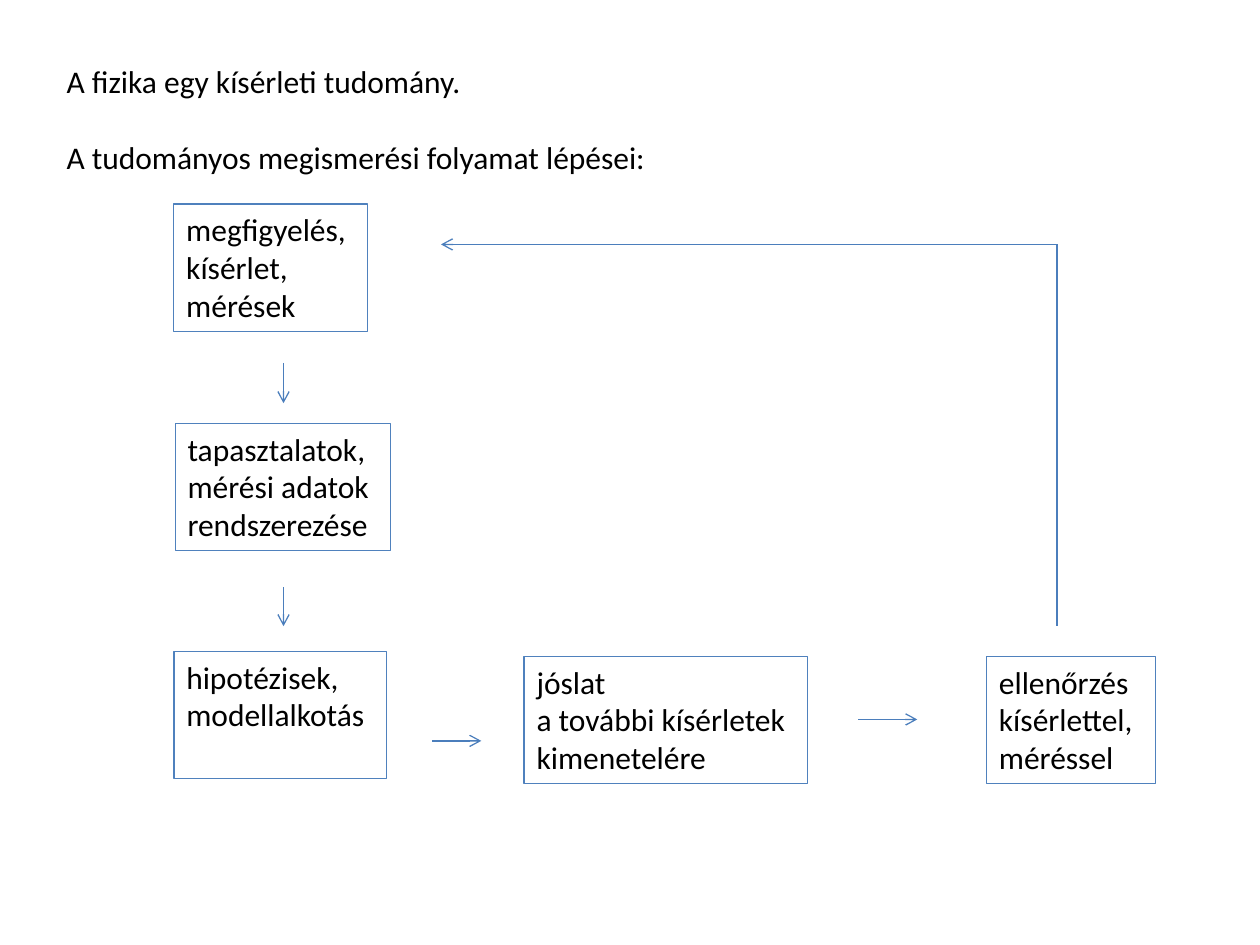
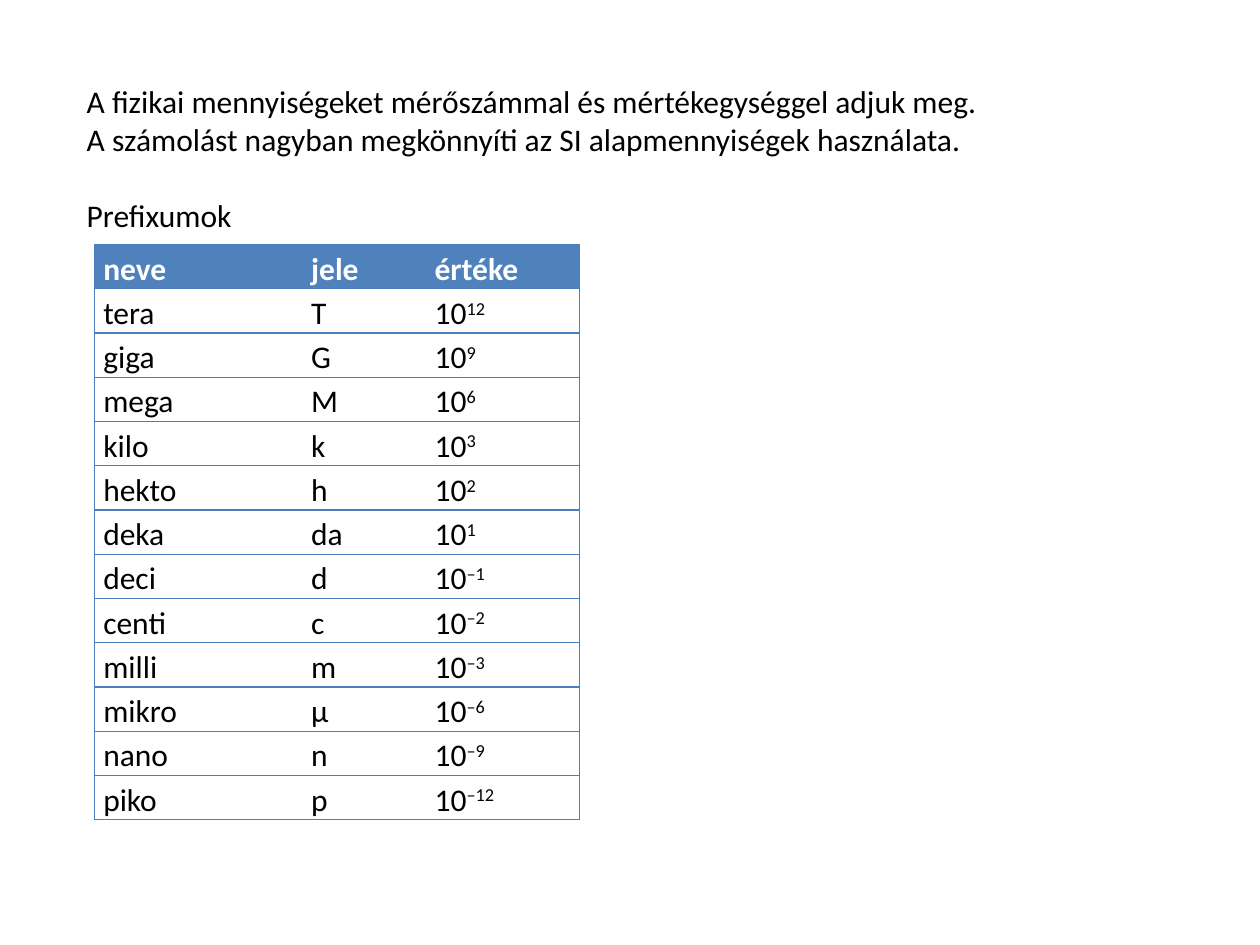
"""Build two physics slides: the steps of scientific inquiry and the SI prefixes."""

from dataclasses import dataclass

import lxml.etree
import pptx
import pptx.dml.color
import pptx.enum.shapes
import pptx.enum.text
import pptx.oxml.ns
import pptx.shapes.autoshape
import pptx.slide
import pptx.table
import pptx.text.text
import pptx.util
from pptx.util import Inches

COLORS = {
    "text": "000000",
    "header_text": "FFFFFF",
    "header": "4F81BD",
    "box_line": "4F81BD",
    "rule": "4B7EBC",
}
FONT = "Calibri"
FONT_SIZE = pptx.util.Pt(18)
LINE_WIDTH = pptx.util.Pt(0.75)
PARAGRAPH_GAP = pptx.util.Pt(22)
STEP_HEIGHT = 1.01
COLUMN_ARROW_X = 2.25
RETURN_X, RETURN_Y = 8.39, 1.94
RETURN_BOTTOM = 4.97


@dataclass(frozen=True)
class Step:
    """A boxed step of the process."""

    left: float
    top: float
    width: float
    lines: tuple[str, ...]


@dataclass(frozen=True)
class Link:
    """A straight line, with or without an arrowhead at its end."""

    begin: tuple[float, float]
    end: tuple[float, float]
    arrow: bool = True


@dataclass(frozen=True)
class Prefix:
    """An SI prefix with its power of ten."""

    name: str
    symbol: str
    exponent: str


STEPS = (
    Step(1.38, 1.62, 1.54, ("megfigyelés,", "kísérlet,", "mérések")),
    Step(1.39, 3.36, 1.71, ("tapasztalatok,", "mérési adatok", "rendszerezése")),
    Step(1.38, 5.17, 1.69, ("hipotézisek,", "modellalkotás")),
    Step(4.16, 5.21, 2.25, ("jóslat", "a további kísérletek", "kimenetelére")),
    Step(7.83, 5.21, 1.34, ("ellenőrzés", "kísérlettel,", "méréssel")),
)
LINKS = (
    Link((6.81, 5.71), (7.28, 5.71)),
    Link((3.43, 5.88), (3.82, 5.88)),
    Link((RETURN_X, RETURN_Y), (3.5, RETURN_Y)),
    Link((RETURN_X, RETURN_Y), (RETURN_X, RETURN_BOTTOM), arrow=False),
    Link((COLUMN_ARROW_X, 2.88), (COLUMN_ARROW_X, 3.2)),
    Link((COLUMN_ARROW_X, 4.66), (COLUMN_ARROW_X, 4.97)),
)
HEADINGS = ("neve", "jele", "értéke")
COLUMN_WIDTHS = (1.65, 0.98, 1.22)
TABLE_HEIGHT = 4.49
PREFIXES = (
    Prefix("tera", "T", "12"),
    Prefix("giga", "G", "9"),
    Prefix("mega", "M", "6"),
    Prefix("kilo", "k", "3"),
    Prefix("hekto", "h", "2"),
    Prefix("deka", "da", "1"),
    Prefix("deci", "d", "–1"),
    Prefix("centi", "c", "–2"),
    Prefix("milli", "m", "–3"),
    Prefix("mikro", "μ", "–6"),
    Prefix("nano", "n", "–9"),
    Prefix("piko", "p", "–12"),
)


def rgb(name: str) -> pptx.dml.color.RGBColor:
    """Return the named colour."""
    return pptx.dml.color.RGBColor.from_string(COLORS[name])


def add_run(
    paragraph: pptx.text.text._Paragraph,
    text: str,
    color: str = "text",
    bold: bool = False,
    superscript: bool = False,
) -> None:
    """Add one formatted run."""
    run = paragraph.add_run()
    run.text = text
    run.font.name = FONT
    run.font.size = FONT_SIZE
    run.font.bold = bold
    run.font.color.rgb = rgb(color)
    if superscript:
        run._r.get_or_add_rPr().set("baseline", "30000")


def add_text(
    slide: pptx.slide.Slide,
    left: float,
    top: float,
    width: float,
    height: float,
    lines: tuple[str, ...],
    wrap: bool = True,
) -> pptx.shapes.autoshape.Shape:
    """Add a text box with one paragraph per line."""
    shape = slide.shapes.add_textbox(Inches(left), Inches(top), Inches(width), Inches(height))
    frame = shape.text_frame
    frame.word_wrap = wrap
    frame.auto_size = pptx.enum.text.MSO_AUTO_SIZE.NONE
    for index, line in enumerate(lines):
        paragraph = frame.add_paragraph() if index else frame.paragraphs[0]
        add_run(paragraph, line)
    return shape


def add_intro(
    slide: pptx.slide.Slide, left: float, top: float, height: float, lines: tuple[str, ...]
) -> None:
    """Add opening text whose last line is set apart."""
    shape = add_text(slide, left, top, 8.66, height, lines)
    shape.text_frame.paragraphs[-1].space_before = PARAGRAPH_GAP


def add_step(slide: pptx.slide.Slide, step: Step) -> None:
    """Add a step in an outlined box."""
    shape = add_text(slide, step.left, step.top, step.width, STEP_HEIGHT, step.lines, wrap=False)
    shape.line.color.rgb = rgb("box_line")
    shape.line.width = LINE_WIDTH


def add_link(slide: pptx.slide.Slide, link: Link) -> None:
    """Add a connector without a shadow."""
    connector = slide.shapes.add_connector(
        pptx.enum.shapes.MSO_CONNECTOR.STRAIGHT,
        *(Inches(value) for value in link.begin + link.end),
    )
    connector.line.color.rgb = rgb("rule")
    connector.line.width = LINE_WIDTH
    if link.arrow:
        line = connector.line._get_or_add_ln()
        lxml.etree.SubElement(line, pptx.oxml.ns.qn("a:tailEnd"), type="arrow")
    lxml.etree.SubElement(connector._element.spPr, pptx.oxml.ns.qn("a:effectLst"))


def set_border(cell: pptx.table._Cell, side: str, visible: bool) -> None:
    """Draw or hide one side of a cell (L, R, T or B)."""
    qn = pptx.oxml.ns.qn
    properties = cell._tc.get_or_add_tcPr()
    line = lxml.etree.SubElement(properties, qn(f"a:ln{side}"), w=str(int(LINE_WIDTH)))
    if visible:
        fill = lxml.etree.SubElement(line, qn("a:solidFill"))
        lxml.etree.SubElement(fill, qn("a:srgbClr"), val=COLORS["rule"])
    else:
        lxml.etree.SubElement(line, qn("a:noFill"))


def format_cell(cell: pptx.table._Cell, column: int, header: bool) -> None:
    """Set the margins, borders, fill and line spacing of a cell."""
    cell.margin_left = cell.margin_right = Inches(0.07)
    cell.margin_top = cell.margin_bottom = 0
    borders = {"L": column == 0, "R": column == len(HEADINGS) - 1, "T": True, "B": True}
    for side, visible in borders.items():
        set_border(cell, side, visible)
    if header:
        cell.fill.solid()
        cell.fill.fore_color.rgb = rgb("header")
    else:
        cell.fill.background()
    cell.text_frame.paragraphs[0].line_spacing = 1.15


def add_prefix_table(slide: pptx.slide.Slide) -> None:
    """Add the table of SI prefixes."""
    row_count = len(PREFIXES) + 1
    table = slide.shapes.add_table(
        row_count,
        len(HEADINGS),
        Inches(0.75),
        Inches(1.94),
        Inches(sum(COLUMN_WIDTHS)),
        Inches(TABLE_HEIGHT),
    ).table
    table.horz_banding = False
    for column, width in zip(table.columns, COLUMN_WIDTHS):
        column.width = Inches(width)
    for row in table.rows:
        row.height = Inches(TABLE_HEIGHT / row_count)
    rows = (HEADINGS, *((prefix.name, prefix.symbol, "10") for prefix in PREFIXES))
    for row_index, texts in enumerate(rows):
        header = row_index == 0
        for column_index, text in enumerate(texts):
            cell = table.cell(row_index, column_index)
            format_cell(cell, column_index, header)
            color = "header_text" if header else "text"
            add_run(cell.text_frame.paragraphs[0], text, color, bold=header)
    for row_index, prefix in enumerate(PREFIXES, start=1):
        paragraph = table.cell(row_index, 2).text_frame.paragraphs[0]
        add_run(paragraph, prefix.exponent, superscript=True)


def build_process_slide(slide: pptx.slide.Slide) -> None:
    """Draw the steps of scientific inquiry."""
    add_intro(slide, 0.43, 0.44, 1.01, (
        "A fizika egy kísérleti tudomány.",
        "A tudományos megismerési folyamat lépései:",
    ))
    for step in STEPS:
        add_step(slide, step)
    for link in LINKS:
        add_link(slide, link)


def build_prefix_slide(slide: pptx.slide.Slide) -> None:
    """Draw the SI prefixes."""
    add_intro(slide, 0.59, 0.6, 1.62, (
        "A fizikai mennyiségeket mérőszámmal és mértékegységgel adjuk meg.",
        "A számolást nagyban megkönnyíti az SI alapmennyiségek használata.",
        "Prefixumok",
    ))
    add_prefix_table(slide)


def main() -> None:
    """Build and save the presentation."""
    presentation = pptx.Presentation()
    presentation.slide_width = Inches(10)
    presentation.slide_height = Inches(7.5)
    blank_layout = presentation.slide_layouts[6]
    for build in (build_process_slide, build_prefix_slide):
        build(presentation.slides.add_slide(blank_layout))
    presentation.save("out.pptx")


if __name__ == "__main__":
    main()
